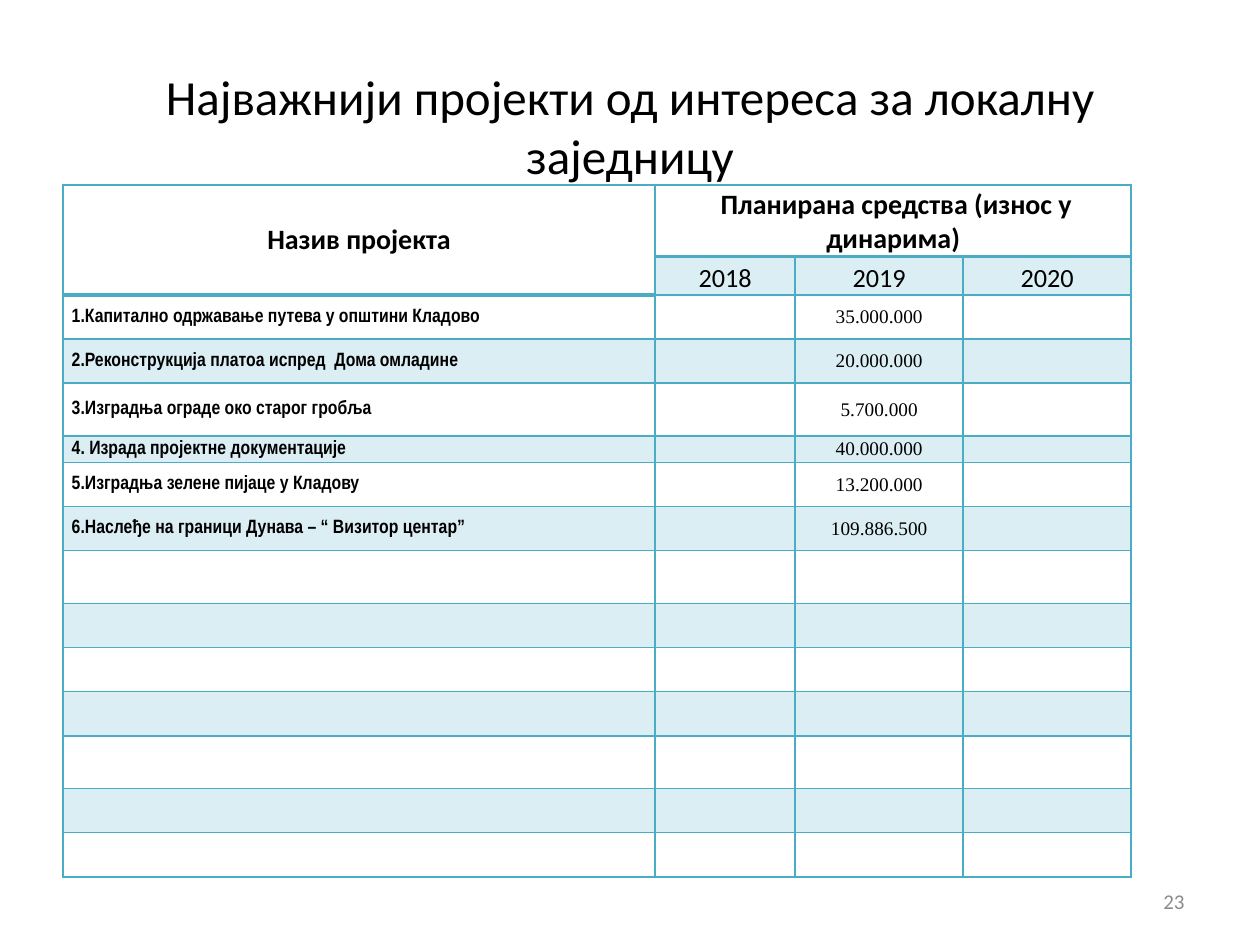
"""Builds a slide with a table of local projects and their planned funds."""
import pptx
import pptx.dml.color
import pptx.enum.text
import pptx.oxml.ns
import pptx.util
from lxml import etree

Pt = pptx.util.Pt
qn = pptx.oxml.ns.qn
AL = pptx.enum.text.PP_ALIGN
ANC = pptx.enum.text.MSO_ANCHOR
COLORS = {"text": "000000", "number": "8C8C8C", "line": "4BACC6", "band": "DBEEF4"}


def put_text(tf, text, size=11, font="Calibri", color="text", bold=False, align=AL.CENTER):
    tf.word_wrap = True
    p = tf.paragraphs[0]
    p.alignment = align
    if not text:
        etree.SubElement(p._p, qn("a:endParaRPr"), sz=str(size * 100))
        return
    r = p.add_run()
    r.text = text
    r.font.size = Pt(size)
    r.font.name = font
    r.font.bold = bold
    r.font.color.rgb = pptx.dml.color.RGBColor.from_string(COLORS[color])


def add_borders(cell, thick):
    tcPr = cell._tc.get_or_add_tcPr()
    for side in ("L", "R", "T", "B"):
        width = Pt(2 if side in thick else 1)
        ln = etree.SubElement(tcPr, qn("a:ln" + side), w=str(width))
        fill = etree.SubElement(ln, qn("a:solidFill"))
        etree.SubElement(fill, qn("a:srgbClr"), val=COLORS["line"])


prs = pptx.Presentation()
prs.slide_width, prs.slide_height = Pt(720), Pt(540)
s = prs.slides.add_slide(prs.slide_layouts[6])

labels = [
    ("Најважнији пројекти од интереса за локалну заједницу", (36, 21.6, 648, 100),
     dict(size=28)),
    ("23", (516, 500.5, 168, 28.8), dict(size=12, color="number", align=AL.RIGHT)),
]
for text, box, fmt in labels:
    tf = s.shapes.add_textbox(*map(Pt, box)).text_frame
    tf.vertical_anchor = ANC.MIDDLE
    put_text(tf, text, **fmt)

projects = [
    ("1.Капитално одржавање путева у општини Кладово", "35.000.000"),
    ("2.Реконструкција платоа испред  Дома омладине", "20.000.000"),
    ("3.Изградња ограде око старог гробља", "5.700.000"),
    ("4. Израда пројектне документације", "40.000.000"),
    ("5.Изградња зелене пијаце у Кладову", "13.200.000"),
    ("6.Наслеђе на граници Дунава – “ Визитор центар”", "109.886.500"),
]
rows = [["Назив пројекта", " Планирана средства (износ у динарима)", "", ""],
        ["", "2018", "2019", "2020"]]
rows += [[name, "", amount, ""] for name, amount in projects]
rows += [[""] * 4 for _ in range(7)]
widths = [338.4, 80, 96, 96]
heights = [41, 22, 25.2, 25.2, 30.2, 15.1] + [25.2, 25.2, 30.2, 25.2] * 2 + [25.2]

sp = s.shapes.add_table(len(rows), len(widths), Pt(36), Pt(105.6),
                        Pt(sum(widths)), Pt(sum(heights)))
tbl = sp.table
tbl.first_row = tbl.horz_banding = False
for col, width in zip(tbl.columns, widths):
    col.width = Pt(width)
for row, height in zip(tbl.rows, heights):
    row.height = Pt(height)
tbl.cell(0, 0).merge(tbl.cell(1, 0))
tbl.cell(0, 1).merge(tbl.cell(0, 3))

for i, row in enumerate(rows):
    for j, text in enumerate(row):
        cell = tbl.cell(i, j)
        cell.margin_left = cell.margin_right = Pt(5)
        cell.margin_top = cell.margin_bottom = 0
        cell.vertical_anchor = ANC.BOTTOM if i < 2 and j else ANC.MIDDLE
        header_end = 1 if j == 0 else 0
        thick = "B" if i <= header_end else "T" if i == header_end + 1 else ""
        add_borders(cell, thick)
        if i % 2 and (i > 1 or j):
            cell.fill.solid()
            cell.fill.fore_color.rgb = pptx.dml.color.RGBColor.from_string(COLORS["band"])
        else:
            cell.fill.background()
        if i == 0:
            fmt = dict(size=16, bold=True)
        elif i == 1:
            fmt = dict(size=15)
        elif j == 0:
            fmt = dict(font="Arial Narrow", bold=True, align=AL.LEFT)
        else:
            fmt = dict(font="Times New Roman")
        put_text(cell.text_frame, text, **fmt)

prs.save("out.pptx")
